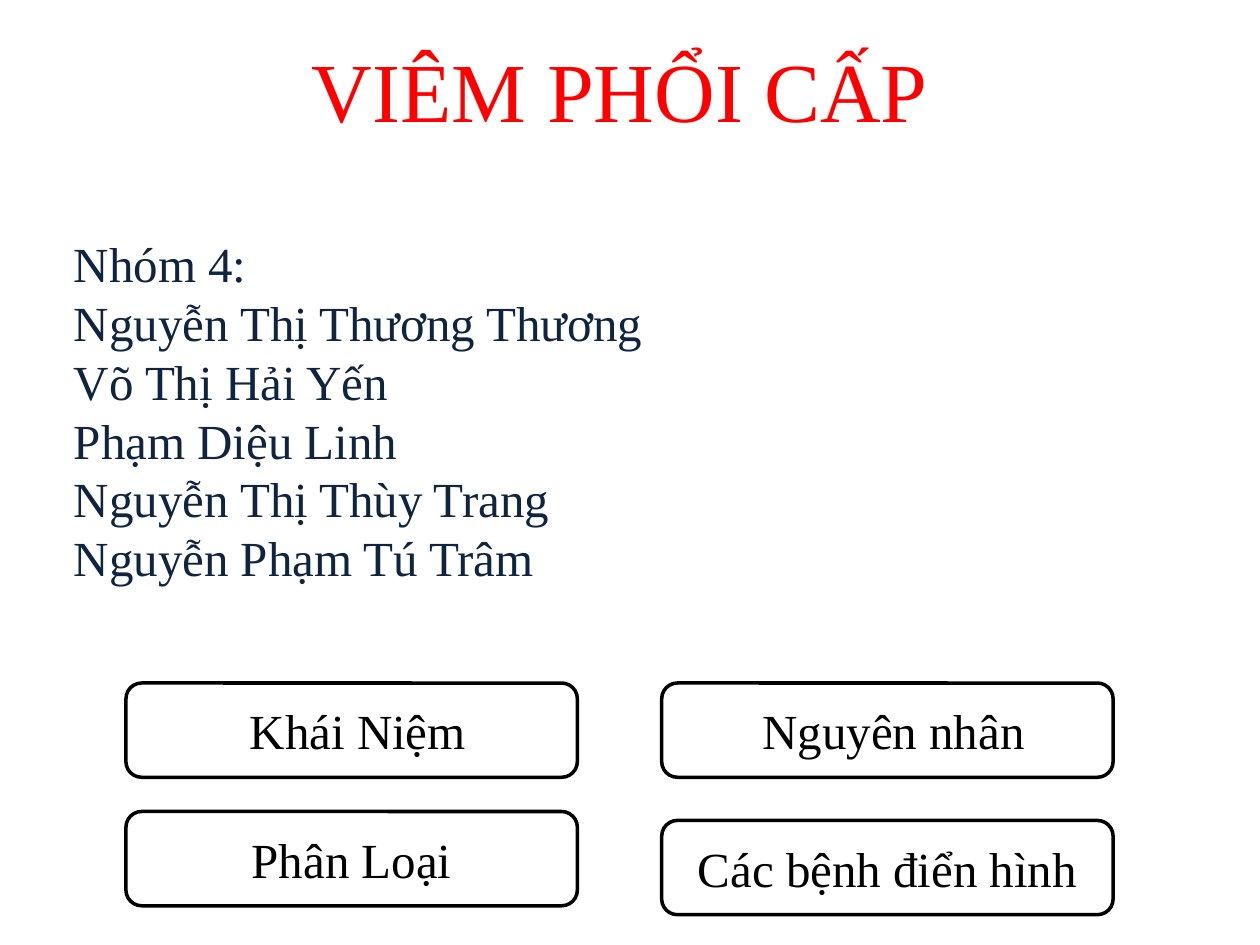
from dataclasses import dataclass

from pptx import Presentation
from pptx.dml.color import RGBColor
from pptx.enum.shapes import MSO_SHAPE
from pptx.enum.text import MSO_ANCHOR, MSO_AUTO_SIZE, PP_ALIGN
from pptx.util import Cm, Pt

ROUND = MSO_SHAPE.ROUNDED_RECTANGLE
TOP, MIDDLE = MSO_ANCHOR.TOP, MSO_ANCHOR.MIDDLE
LEFT, CENTER = PP_ALIGN.LEFT, PP_ALIGN.CENTER
FIXED = MSO_AUTO_SIZE.NONE


@dataclass(frozen=True)
class Theme:
    """Colours, type sizes and font of the slide."""
    font: str = "Times New Roman"
    red: RGBColor = RGBColor(0xFF, 0x00, 0x00)
    navy: RGBColor = RGBColor(0x0F, 0x24, 0x3E)
    black: RGBColor = RGBColor(0x00, 0x00, 0x00)
    head: Pt = Pt(48)
    body: Pt = Pt(28)
    line: Pt = Pt(2)


THEME = Theme()
GROUP = (
    "Nhóm 4:",
    "Nguyễn Thị Thương Thương",
    "Võ Thị Hải Yến",
    "Phạm Diệu Linh",
    "Nguyễn Thị Thùy Trang",
    "Nguyễn Phạm Tú Trâm",
)
TOPICS = (
    (" Khái Niệm", 2.54, 13.77),
    (" Nguyên nhân", 13.34, 13.77),
    ("Phân Loại", 2.54, 16.36),
    ("Các bệnh điển hình", 13.34, 16.54),
)


def write(shape, lines, size=THEME.body, color=THEME.black, align=LEFT, anchor=TOP):
    """Fill a shape with one paragraph per line in the given format."""
    frame = shape.text_frame
    frame.text = "\n".join(lines)
    frame.word_wrap = True
    frame.auto_size = FIXED
    frame.vertical_anchor = anchor
    for para in frame.paragraphs:
        para.alignment = align
        for run in para.runs:
            run.font.name = THEME.font
            run.font.size = size
            run.font.color.rgb = color


def add_title(slide, text):
    """Place and format the title placeholder."""
    title = slide.shapes.title
    title.left, title.top = Cm(4.24), Cm(0.64)
    title.width, title.height = Cm(16.51), Cm(2.31)
    write(title, [text], size=THEME.head, color=THEME.red, align=CENTER)


def add_names(slide, names):
    """List the group members below the title."""
    box = slide.shapes.add_textbox(Cm(1.24), Cm(3.38), Cm(12.09), Cm(11.02))
    write(box, names, color=THEME.navy)
    box.text_frame.margin_top = Cm(1.33)


def add_topic(slide, text, left, top):
    """Draw one outlined topic button."""
    shape = slide.shapes.add_shape(ROUND, Cm(left), Cm(top), Cm(9.1), Cm(1.9))
    shape.shadow.inherit = False
    shape.fill.background()
    shape.line.color.rgb = THEME.black
    shape.line.width = THEME.line
    write(shape, [text], align=CENTER, anchor=MIDDLE)


def main():
    """Build and save the slide."""
    deck = Presentation()
    deck.slide_width, deck.slide_height = Cm(25.4), Cm(19.05)
    slide = deck.slides.add_slide(deck.slide_layouts.get_by_name("Title Only"))
    add_title(slide, "VIÊM PHỔI CẤP")
    add_names(slide, GROUP)
    for text, left, top in TOPICS:
        add_topic(slide, text, left, top)
    deck.save("out.pptx")


if __name__ == "__main__":
    main()
